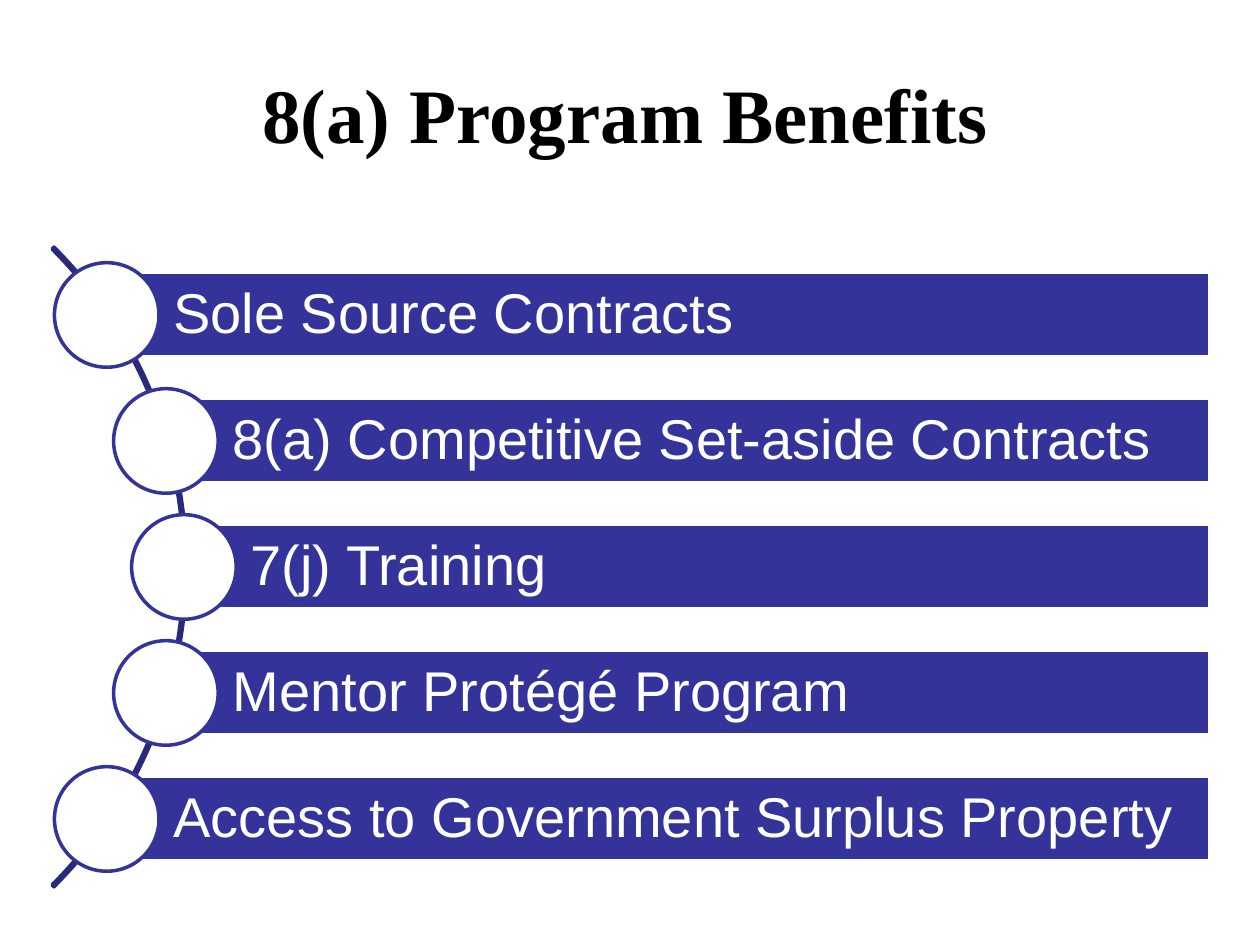
"""Build the 8(a) Program Benefits slide: five bars fanned along an arc."""
from math import sqrt

from pptx import Presentation
from pptx.dml.color import RGBColor
from pptx.enum.shapes import MSO_SHAPE
from pptx.enum.text import MSO_ANCHOR, PP_ALIGN
from pptx.util import Inches, Pt

BLACK = RGBColor(0x00, 0x00, 0x00)
WHITE = RGBColor(0xFF, 0xFF, 0xFF)
INDIGO = RGBColor(0x33, 0x33, 0x99)
NAVY = RGBColor(0x29, 0x29, 0x7B)

BENEFITS = [
    "Sole Source Contracts",
    "8(a) Competitive Set-aside Contracts",
    "7(j) Training",
    "Mentor Protégé Program",
    "Access to Government Surplus Property",
]
HUB_X, HUB_Y = -2.11, 4.5
ARC_SIZE, TRACK_RADIUS = 7.18, 3.57
ROW_PITCH, BAR_HEIGHT, BAR_RIGHT = 1, 0.67, 9.6
DOT_SIZE = 0.83


def add_outlined(page, kind, left, top, width, height, line_color):
    shape = page.shapes.add_shape(
        kind, Inches(left), Inches(top), Inches(width), Inches(height))
    shape.shadow.inherit = False
    shape.line.color.rgb = line_color
    shape.line.width = Pt(2)
    return shape


deck = Presentation()
deck.slide_width, deck.slide_height = Inches(10), Inches(7.5)
page = deck.slides.add_slide(deck.slide_layouts[5])

title = page.shapes.title
title.left, title.top = Inches(0.58), Inches(0.42)
title.width, title.height = Inches(9), Inches(1.25)
title.text_frame.text = "8(a) Program Benefits\t"
title.text_frame.vertical_anchor = MSO_ANCHOR.TOP
title.text_frame.margin_top = Inches(0.11)
para = title.text_frame.paragraphs[0]
para.alignment = PP_ALIGN.CENTER
span = para.runs[0]
span.font.name, span.font.size, span.font.bold = "Times New Roman", Pt(44), True
span.font.color.rgb = BLACK

arc = add_outlined(page, MSO_SHAPE.BLOCK_ARC, HUB_X - ARC_SIZE / 2,
                   HUB_Y - ARC_SIZE / 2, ARC_SIZE, ARC_SIZE, NAVY)
arc.fill.background()
for index, value in enumerate((189, 27, 0.003)):
    arc.adjustments[index] = value

for row, benefit in enumerate(BENEFITS):
    offset = (row - len(BENEFITS) // 2) * ROW_PITCH
    center_x = HUB_X + sqrt(TRACK_RADIUS ** 2 - offset ** 2)
    center_y = HUB_Y + offset

    bar = add_outlined(page, MSO_SHAPE.RECTANGLE, center_x, center_y - BAR_HEIGHT / 2,
                       BAR_RIGHT - center_x, BAR_HEIGHT, WHITE)
    bar.fill.solid()
    bar.fill.fore_color.rgb = INDIGO
    frame = bar.text_frame
    frame.text = benefit
    frame.word_wrap = True
    frame.vertical_anchor = MSO_ANCHOR.MIDDLE
    frame.margin_left = Inches(0.53)
    frame.margin_right = frame.margin_top = frame.margin_bottom = Inches(0.09)
    para = frame.paragraphs[0]
    para.alignment = PP_ALIGN.LEFT
    para.line_spacing = 0.9
    span = para.runs[0]
    span.font.name, span.font.size = "Arial", Pt(32)
    span.font.color.rgb = WHITE

    dot = add_outlined(page, MSO_SHAPE.OVAL, center_x - DOT_SIZE / 2,
                       center_y - DOT_SIZE / 2, DOT_SIZE, DOT_SIZE, INDIGO)
    dot.fill.solid()
    dot.fill.fore_color.rgb = WHITE

deck.save("out.pptx")
